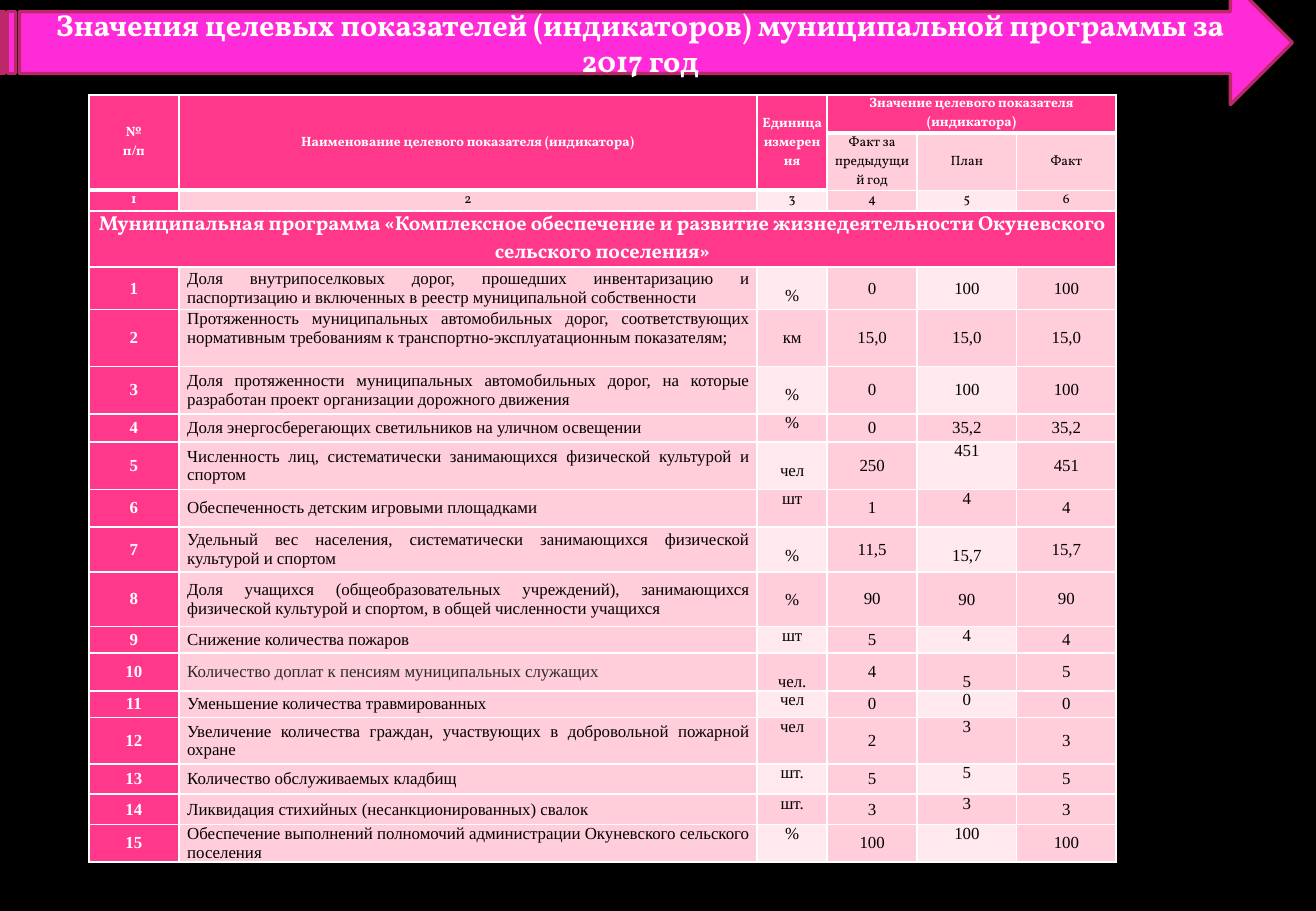
from dataclasses import dataclass, replace

from lxml.etree import SubElement
from pptx import Presentation
from pptx.dml.color import RGBColor
from pptx.enum.shapes import MSO_SHAPE
from pptx.enum.text import MSO_ANCHOR, PP_ALIGN
from pptx.oxml.ns import qn
from pptx.slide import Slide
from pptx.table import Table, _Cell
from pptx.text.text import _Paragraph
from pptx.util import Pt

COLORS = {
    "black": "000000", "white": "FFFFFF", "gray": "2A2A2A",
    "pink": "FF388C", "light": "FFCEDA", "pale": "FFE8EE",
    "arrow": "FF2BD8", "outline": "BD2968",
}
COLUMNS = [53.3, 342.8, 41.5, 53.3, 59, 59]
ROWS = [10, 31, 12.2, 33.1, 25.2, 33.8, 28.1, 16.6, 28.1, 22.3,
        26.6, 32.4, 15.8, 19.4, 15.8, 27.4, 18, 18, 18]
LINE = 11.4
MIDDLE, TOP = MSO_ANCHOR.MIDDLE, MSO_ANCHOR.TOP


@dataclass(frozen=True)
class Look:
    """Appearance of a table cell."""
    fill: str
    color: str = "black"
    bold: bool = False
    size: float = 10
    font: str = "Times New Roman"
    align: PP_ALIGN = PP_ALIGN.CENTER
    anchor: MSO_ANCHOR = MIDDLE
    side: float = 5
    drop: float = 0
    bottom: float = 1


@dataclass(frozen=True)
class Heading:
    """Header cell with its place and span."""
    row: int
    col: int
    lines: tuple[str, ...]
    look: Look
    rows: int = 1
    cols: int = 1


@dataclass(frozen=True)
class Indicator:
    """One indicator of the programme."""
    name: str
    unit: str
    prior: str
    plan: str
    fact: str
    unit_drop: float = 0
    plan_anchor: MSO_ANCHOR = TOP
    plan_drop: float = 0
    name_color: str = "black"
    name_anchor: MSO_ANCHOR = MIDDLE


NUMBER = Look("pink", "white", True)
HEAD = Look("pink", "white", True, 8, "Vollkorn", side=2.9, bottom=3)
SUBHEAD = replace(HEAD, fill="light", color="black", bold=False, bottom=1)
LIGHT = Look("light")

HEADINGS = [
    Heading(0, 0, ("№", "п/п"), HEAD, rows=2),
    Heading(0, 1, ("Наименование целевого показателя (индикатора)",), HEAD, rows=2),
    Heading(0, 2, ("Единица измерения",), HEAD, rows=2),
    Heading(0, 3, ("Значение целевого показателя (индикатора)",),
            replace(HEAD, anchor=TOP), cols=3),
    Heading(1, 3, ("Факт за предыдущий год",), SUBHEAD),
    Heading(1, 4, ("План",), SUBHEAD),
    Heading(1, 5, ("Факт",), SUBHEAD),
    Heading(3, 0, ("Муниципальная программа «Комплексное обеспечение и развитие "
                   "жизнедеятельности Окуневского сельского поселения»",),
            replace(HEAD, size=12, bottom=1), cols=6),
]
INDICATORS = [
    Indicator("Доля внутрипоселковых дорог, прошедших инвентаризацию и паспортизацию "
              "и включенных в реестр муниципальной собственности",
              "%", "0", "100", "100", LINE, MIDDLE),
    Indicator("Протяженность муниципальных автомобильных дорог, соответствующих "
              "нормативным требованиям к транспортно-эксплуатационным показателям;",
              "км", "15,0", "15,0", "15,0", LINE, MIDDLE, name_anchor=TOP),
    Indicator("Доля протяженности муниципальных автомобильных дорог, на которые "
              "разработан проект организации дорожного движения",
              "%", "0", "100", "100", LINE, MIDDLE),
    Indicator("Доля энергосберегающих светильников на уличном освещении",
              "%", "0", "35,2", "35,2", plan_anchor=MIDDLE),
    Indicator("Численность лиц, систематически занимающихся физической культурой и спортом",
              "чел", "250", "451", "451", LINE),
    Indicator("Обеспеченность детским игровыми площадками", "шт", "1", "4", "4"),
    Indicator("Удельный вес населения, систематически занимающихся физической "
              "культурой и спортом", "%", "11,5", "15,7", "15,7", LINE, plan_drop=LINE),
    Indicator("Доля учащихся (общеобразовательных учреждений), занимающихся физической "
              "культурой и спортом, в общей численности учащихся",
              "%", "90", "90", "90", LINE, plan_drop=LINE),
    Indicator("Снижение количества пожаров", "шт", "5", "4", "4"),
    Indicator("Количество доплат к пенсиям муниципальных служащих",
              "чел.", "4", "5", "5", LINE, plan_drop=LINE, name_color="gray"),
    Indicator("Уменьшение количества травмированных", "чел", "0", "0", "0"),
    Indicator("Увеличение количества граждан, участвующих в добровольной пожарной охране",
              "чел", "2", "3", "3"),
    Indicator("Количество обслуживаемых кладбищ", "шт.", "5", "5", "5"),
    Indicator("Ликвидация стихийных (несанкционированных) свалок", "шт.", "3", "3", "3"),
    Indicator("Обеспечение выполнений полномочий администрации Окуневского "
              "сельского поселения", "%", "100", "100", "100"),
]


def rgb(name: str) -> RGBColor:
    """Return a named colour."""
    return RGBColor.from_string(COLORS[name])


def add_run(p: _Paragraph, text: str, size: float, font: str, color: str, bold: bool) -> None:
    """Add a formatted run to a paragraph."""
    r = p.add_run()
    r.text = text
    r.font.size, r.font.name, r.font.bold = Pt(size), font, bold
    r.font.color.rgb = rgb(color)


def set_borders(cell: _Cell, bottom: float) -> None:
    """Give a cell white borders."""
    tcPr = cell._tc.get_or_add_tcPr()
    for tag, width in (("a:lnL", 1), ("a:lnR", 1), ("a:lnT", 1), ("a:lnB", bottom)):
        ln = SubElement(tcPr, qn(tag), w=str(Pt(width)))
        fill = SubElement(ln, qn("a:solidFill"))
        SubElement(fill, qn("a:srgbClr"), val=COLORS["white"])


def style_cell(cell: _Cell, look: Look) -> None:
    """Set the borders, fill and margins of a cell."""
    set_borders(cell, look.bottom)
    cell.fill.solid()
    cell.fill.fore_color.rgb = rgb(look.fill)
    cell.vertical_anchor = look.anchor
    cell.margin_left = cell.margin_right = Pt(look.side)
    cell.margin_top, cell.margin_bottom = Pt(look.drop), Pt(0)


def fill_cell(cell: _Cell, look: Look, *lines: str) -> None:
    """Style a cell and write its lines."""
    style_cell(cell, look)
    tf = cell.text_frame
    for i, line in enumerate(lines):
        p = tf.add_paragraph() if i else tf.paragraphs[0]
        p.alignment = look.align
        add_run(p, line, look.size, look.font, look.color, look.bold)


def add_heading(table: Table, h: Heading) -> None:
    """Merge and fill a header cell."""
    last_row, last_col = h.row + h.rows - 1, h.col + h.cols - 1
    cell = table.cell(h.row, h.col)
    if h.rows * h.cols > 1:
        cell.merge(table.cell(last_row, last_col))
    for row in range(h.row, last_row + 1):
        for col in range(h.col, last_col + 1):
            if (row, col) != (h.row, h.col):
                style_cell(table.cell(row, col), h.look)
    fill_cell(cell, h.look, *h.lines)


def add_indicator(table: Table, number: int, ind: Indicator) -> None:
    """Fill the row of one indicator."""
    band = Look("pale" if number % 2 else "light")
    cells = [
        (str(number), NUMBER),
        (ind.name, replace(LIGHT, color=ind.name_color, align=PP_ALIGN.JUSTIFY,
                           anchor=ind.name_anchor)),
        (ind.unit, replace(band, anchor=TOP, drop=ind.unit_drop)),
        (ind.prior, LIGHT),
        (ind.plan, replace(band, anchor=ind.plan_anchor, drop=ind.plan_drop)),
        (ind.fact, LIGHT),
    ]
    for col, (text, look) in enumerate(cells):
        fill_cell(table.cell(number + 3, col), look, text)


def add_indicator_table(s: Slide) -> None:
    """Draw the table of indicators."""
    frame = s.shapes.add_table(len(ROWS), len(COLUMNS), Pt(52.7), Pt(56.3),
                               Pt(sum(COLUMNS)), Pt(sum(ROWS)))
    table = frame.table
    table.first_row = table.horz_banding = False
    for column, width in zip(table.columns, COLUMNS):
        column.width = Pt(width)
    for row, height in zip(table.rows, ROWS):
        row.height = Pt(height)
    for heading in HEADINGS:
        add_heading(table, heading)
    for col, fill in enumerate(("pink", "light", "pale", "light", "pale", "light")):
        look = HEAD if col == 0 else SUBHEAD
        fill_cell(table.cell(2, col), replace(look, fill=fill, bottom=1), str(col + 1))
    for number, ind in enumerate(INDICATORS, 1):
        add_indicator(table, number, ind)


def add_title_arrow(s: Slide) -> None:
    """Draw the striped arrow with the title."""
    sp = s.shapes.add_shape(MSO_SHAPE.STRIPED_RIGHT_ARROW, Pt(0), Pt(-11.5), Pt(766), Pt(73.5))
    sp.shadow.inherit = False
    sp.fill.solid()
    sp.fill.fore_color.rgb = rgb("arrow")
    sp.line.color.rgb = rgb("outline")
    sp.line.width = Pt(2)
    tf = sp.text_frame
    tf.word_wrap = True
    tf.vertical_anchor = MIDDLE
    p = tf.paragraphs[0]
    p.alignment = PP_ALIGN.CENTER
    add_run(p, "Значения целевых показателей (индикаторов) муниципальной программы "
            "за 2017 год", 18, "Vollkorn", "white", True)


def main() -> None:
    """Build and save the slide."""
    prs = Presentation()
    prs.slide_width, prs.slide_height = Pt(780), Pt(540)
    s = prs.slides.add_slide(prs.slide_layouts[6])
    s.background.fill.solid()
    s.background.fill.fore_color.rgb = rgb("black")
    add_indicator_table(s)
    add_title_arrow(s)
    prs.save("out.pptx")


if __name__ == "__main__":
    main()
